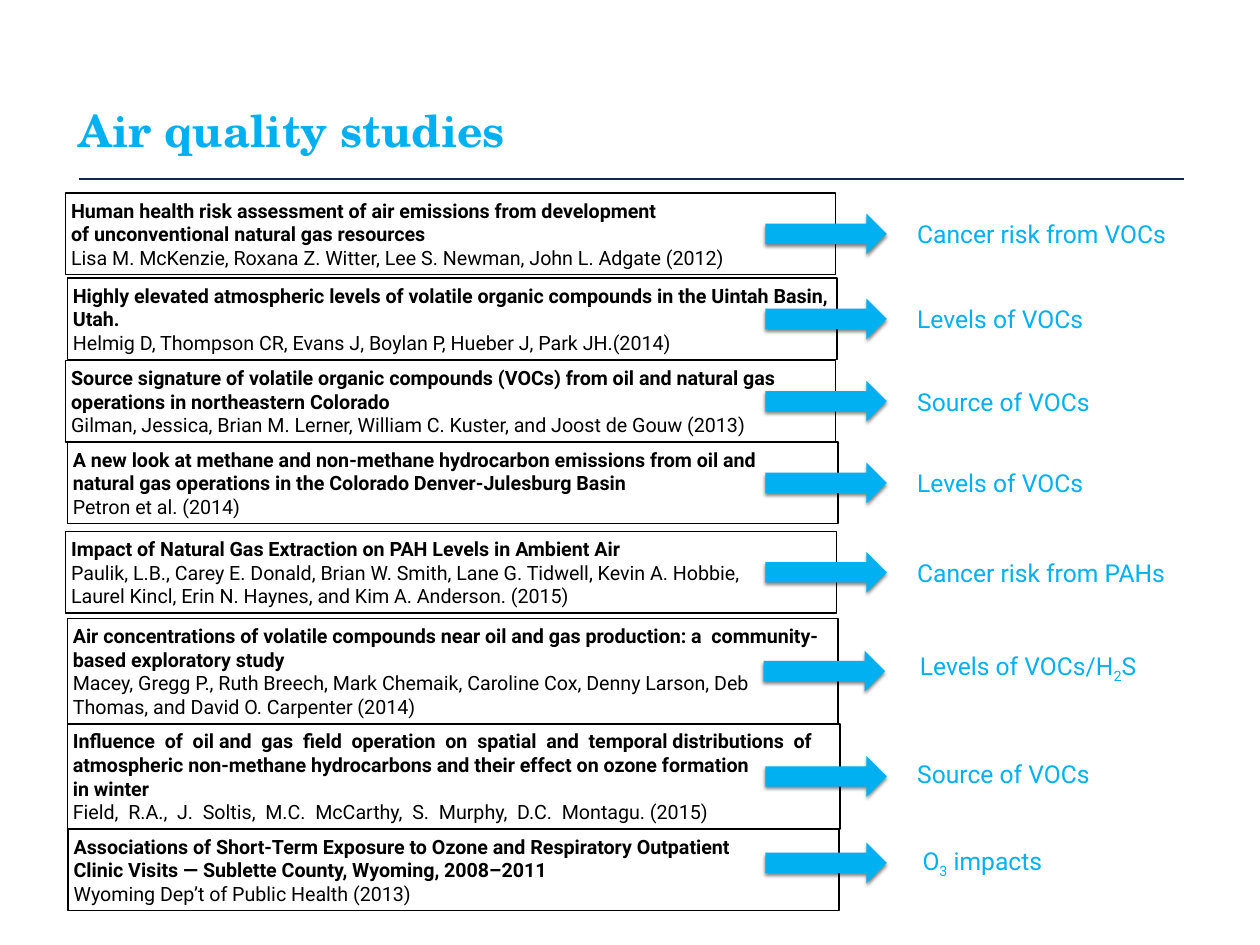
from dataclasses import dataclass

import lxml.etree
import pptx
import pptx.dml.color
import pptx.enum.shapes
import pptx.enum.text
import pptx.oxml.ns
import pptx.util

Pt = pptx.util.Pt
RGBColor = pptx.dml.color.RGBColor
Align = pptx.enum.text.PP_ALIGN
Shape = pptx.enum.shapes.MSO_SHAPE
qn = pptx.oxml.ns.qn

SKY = RGBColor(0x00, 0xB0, 0xF0)
NAVY = RGBColor(0x14, 0x28, 0x4B)
BLACK = RGBColor(0x00, 0x00, 0x00)

LABEL_WIDTH = 214
LABEL_HEIGHT = 32.4
ARROW_WIDTH = 98.6
ARROW_HEIGHT = 33.1


@dataclass
class Study:
    """Every second span of the finding is a subscript."""
    left: float
    top: float
    width: float
    height: float
    title: list
    authors: list
    finding: list
    finding_left: float = 740.9
    finding_shift: float = 0
    finding_align: Align = Align.LEFT
    arrow_left: float = 622.1
    arrow_shift: float = 0


STUDIES = [
    Study(53.3, 157, 625.7, 66.2,
          ["Human health risk assessment of air emissions from development",
           "of unconventional natural gas resources"],
          ["Lisa M. McKenzie, Roxana Z. Witter, Lee S. Newman, John L. Adgate (2012)"],
          ["Cancer risk from VOCs"]),
    Study(54.7, 226.1, 625.7, 66.2,
          ["Highly elevated atmospheric levels of volatile organic compounds "
           "in the Uintah Basin, Utah."],
          ["Helmig D, Thompson CR, Evans J, Boylan P, Hueber J, Park JH.(2014)"],
          ["Levels of VOCs"]),
    Study(53.3, 293, 625.7, 66.2,
          ["Source signature of volatile organic compounds (VOCs) from oil and "
           "natural gas operations in northeastern Colorado"],
          ["Gilman, Jessica, Brian M. Lerner, William C. Kuster, and Joost de Gouw (2013)"],
          ["Source of VOCs"]),
    Study(54.7, 359.3, 626.4, 66.2,
          ["A new look at methane and non-methane hydrocarbon emissions from oil and",
           "natural gas operations in the Colorado Denver-Julesburg Basin"],
          ["Petron et al. (2014)"],
          ["Levels of VOCs"]),
    Study(53.3, 432, 626.4, 66.2,
          ["Impact of Natural Gas Extraction on PAH Levels in Ambient Air"],
          ["Paulik, L.B., Carey E. Donald, Brian W. Smith, Lane G. Tidwell, Kevin A. Hobbie,",
           "Laurel Kincl, Erin N. Haynes, and Kim A. Anderson. (2015)"],
          ["Cancer risk from PAHs"]),
    Study(54.7, 502.6, 626.4, 85.7,
          ["Air concentrations of volatile compounds near oil and gas production: "
           "a  community-based exploratory study"],
          ["Macey, Gregg P., Ruth Breech, Mark Chemaik, Caroline Cox, Denny Larson, Deb",
           "Thomas, and David O. Carpenter (2014)"],
          ["Levels of VOCs/H", "2", "S"],
          finding_left=728.5, finding_shift=-2.7, finding_align=Align.CENTER,
          arrow_left=620.6),
    Study(54.7, 588.2, 627.8, 85.7,
          ["Influence  of  oil and  gas  field  operation  on  spatial  and  temporal "
           "distributions  of atmospheric non-methane hydrocarbons and their effect "
           "on ozone formation",
           "in winter"],
          ["Field,  R.A.,  J.  Soltis,  M.C.  McCarthy,  S.  Murphy,  D.C.  Montagu. (2015)"],
          ["Source of VOCs"],
          finding_shift=-2.7),
    Study(55.4, 673.9, 626.4, 66.2,
          ["Associations of Short-Term Exposure to Ozone and Respiratory Outpatient",
           "Clinic Visits — Sublette County, Wyoming, 2008–2011"],
          ["Wyoming Dep’t of Public Health (2013)"],
          ["O", "3", " impacts"],
          finding_left=745.2, finding_shift=-5.8, arrow_shift=-5.8),
]


class Page:
    body_font = "Roboto"
    title_font = "TeX Gyre Schola"

    def __init__(self, slide):
        self.shapes = slide.shapes

    def prepare_frame(self, box, inset):
        frame = box.text_frame
        frame.word_wrap = True
        frame.vertical_anchor = pptx.enum.text.MSO_ANCHOR.MIDDLE
        frame.margin_left = frame.margin_right = Pt(inset)
        frame.margin_top = frame.margin_bottom = Pt(inset)
        return frame

    def style(self, para, size, color, bold=False, name=body_font, align=Align.LEFT):
        para.alignment = align
        para.font.size = Pt(size)
        para.font.name = name
        para.font.bold = bold
        para.font.color.rgb = color

    def title(self, text, left, top, width, height):
        box = self.shapes.add_textbox(Pt(left), Pt(top), Pt(width), Pt(height))
        para = self.prepare_frame(box, 0).paragraphs[0]
        para.text = text
        self.style(para, 36, SKY, bold=True, name=self.title_font)

    def rule(self, left, right, y):
        line = self.shapes.add_connector(
            pptx.enum.shapes.MSO_CONNECTOR.STRAIGHT, Pt(left), Pt(y), Pt(right), Pt(y))
        line.line.color.rgb = NAVY
        line.line.width = Pt(1)
        lxml.etree.SubElement(line._element.spPr, qn("a:effectLst"))

    def citation(self, study):
        box = self.shapes.add_shape(Shape.RECTANGLE, Pt(study.left), Pt(study.top),
                                    Pt(study.width), Pt(study.height))
        box.shadow.inherit = False
        box.fill.background()
        box.line.color.rgb = BLACK
        box.line.width = Pt(1.25)
        frame = self.prepare_frame(box, 4.5)
        for index, text in enumerate(study.title + study.authors):
            para = frame.add_paragraph() if index else frame.paragraphs[0]
            para.text = text
            self.style(para, 16, BLACK, bold=index < len(study.title))

    def arrow(self, left, middle):
        arrow = self.shapes.add_shape(Shape.RIGHT_ARROW, Pt(left), Pt(middle - ARROW_HEIGHT / 2),
                                      Pt(ARROW_WIDTH), Pt(ARROW_HEIGHT))
        arrow.fill.solid()
        arrow.fill.fore_color.rgb = SKY
        arrow.line.fill.background()
        arrow.shadow.inherit = False
        effects = arrow._element.spPr.find(qn("a:effectLst"))
        shadow = lxml.etree.SubElement(
            effects, qn("a:outerShdw"), blurRad=str(Pt(3)), dist=str(Pt(2)),
            dir="5400000", rotWithShape="0")
        color = lxml.etree.SubElement(shadow, qn("a:srgbClr"), val=str(BLACK))
        lxml.etree.SubElement(color, qn("a:alpha"), val="50000")

    def finding(self, spans, left, middle, align):
        box = self.shapes.add_textbox(Pt(left), Pt(middle - LABEL_HEIGHT / 2),
                                      Pt(LABEL_WIDTH), Pt(LABEL_HEIGHT))
        para = self.prepare_frame(box, 4.5).paragraphs[0]
        self.style(para, 20, SKY, align=align)
        for index, text in enumerate(spans):
            span = para.add_run()
            span.text = text
            if index % 2:
                span._r.get_or_add_rPr().set("baseline", "-25000")


def main():
    deck = pptx.Presentation()
    deck.slide_width, deck.slide_height = Pt(1024), Pt(768)
    page = Page(deck.slides.add_slide(deck.slide_layouts[6]))
    page.rule(64, 962, 145.4)
    page.title("Air quality studies", 64, 75.6, 895.7, 59.8)
    for study in STUDIES:
        middle = study.top + study.height / 2
        page.citation(study)
        page.arrow(study.arrow_left, middle + study.arrow_shift)
        page.finding(study.finding, study.finding_left,
                     middle + study.finding_shift, study.finding_align)
    deck.save("out.pptx")


if __name__ == "__main__":
    main()
